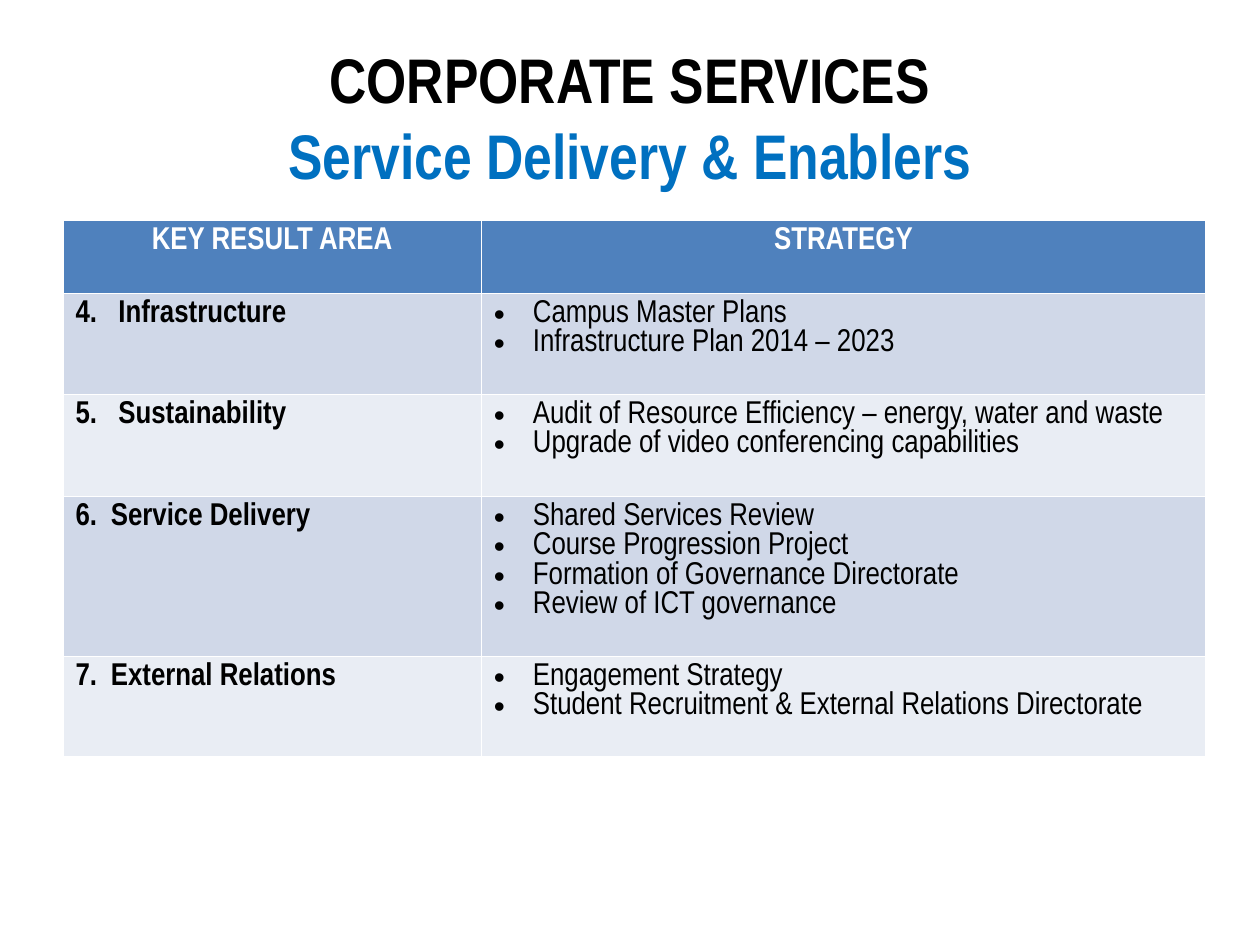
from lxml import etree
from pptx import Presentation
from pptx.dml.color import RGBColor
from pptx.enum.text import MSO_ANCHOR, PP_ALIGN
from pptx.oxml.ns import qn
from pptx.util import Inches, Pt

CENTER = PP_ALIGN.CENTER
LEFT = PP_ALIGN.LEFT
MIDDLE = MSO_ANCHOR.MIDDLE
FONT = "Arial Narrow"
BLACK, WHITE, BLUE = "000000", "FFFFFF", "0070C0"
HEADER_FILL = "4F81BD"
BAND_FILLS = ("D0D8E8", "E9EDF4")
COLUMN_WIDTHS = (3.32, 5.75)
ROW_HEIGHTS = (0.58, 0.8, 0.81, 1.27, 0.8)
HEADINGS = ("KEY RESULT AREA", "STRATEGY")
RESULT_AREAS = (
    ("4.\tInfrastructure", 0.34,
     ("Campus Master Plans", "Infrastructure Plan 2014 – 2023")),
    ("5.\tSustainability", 0.34,
     ("Audit of Resource Efficiency – energy, water and waste",
      "Upgrade of video conferencing capabilities")),
    ("6.\tService Delivery", 0.28,
     ("Shared Services Review", "Course Progression Project",
      "Formation of Governance Directorate", "Review of ICT governance")),
    ("7.\tExternal Relations", 0.28,
     ("Engagement Strategy",
      "Student Recruitment & External Relations Directorate")),
)


def rgb(value):
    """Return the colour for a hex string."""
    return RGBColor.from_string(value)


def add_text(paragraph, text, size=18, color=BLACK, bold=False, align=LEFT, spacing=None):
    """Append a formatted run to a paragraph."""
    paragraph.alignment = align
    if spacing:
        paragraph.line_spacing = spacing
    run = paragraph.add_run()
    run.text = text
    run.font.name = FONT
    run.font.size = Pt(size)
    run.font.bold = bold
    run.font.color.rgb = rgb(color)


def add_tab_stop(paragraph, position):
    """Give a paragraph one left tab stop."""
    tabs = etree.SubElement(paragraph._p.get_or_add_pPr(), qn("a:tabLst"))
    etree.SubElement(tabs, qn("a:tab"), pos=str(Inches(position)), algn="l")


def add_bullet(paragraph, indent=0.31):
    """Give a paragraph a round bullet with a hanging indent."""
    properties = paragraph._p.get_or_add_pPr()
    properties.set("marL", str(Inches(indent)))
    properties.set("indent", str(-Inches(indent)))
    etree.SubElement(properties, qn("a:buFont"), typeface="Arial")
    etree.SubElement(properties, qn("a:buChar"), char="•")


def style_cell(cell, fill):
    """Fill a cell and draw thin white borders around it."""
    properties = cell._tc.get_or_add_tcPr()
    for side in ("a:lnL", "a:lnR", "a:lnT", "a:lnB"):
        line = etree.SubElement(properties, qn(side), w=str(Pt(1)))
        solid = etree.SubElement(line, qn("a:solidFill"))
        etree.SubElement(solid, qn("a:srgbClr"), val=WHITE)
    cell.fill.solid()
    cell.fill.fore_color.rgb = rgb(fill)


def add_title(slide):
    """Add the two-line title."""
    box = slide.shapes.add_textbox(Inches(0.5), Inches(0.3), Inches(9), Inches(1.25))
    frame = box.text_frame
    frame.word_wrap = True
    frame.vertical_anchor = MIDDLE
    paragraph = frame.paragraphs[0]
    add_text(paragraph, "CORPORATE SERVICES", size=36, bold=True, align=CENTER)
    paragraph.add_line_break()
    add_text(paragraph, "Service Delivery & Enablers", size=36, color=BLUE, bold=True, align=CENTER)


def add_strategy_table(slide):
    """Add the table of result areas and their strategies."""
    table = slide.shapes.add_table(
        len(ROW_HEIGHTS), len(COLUMN_WIDTHS), Inches(0.5), Inches(1.75),
        Inches(sum(COLUMN_WIDTHS)), Inches(sum(ROW_HEIGHTS))).table
    for column, width in zip(table.columns, COLUMN_WIDTHS):
        column.width = Inches(width)
    for row, height in zip(table.rows, ROW_HEIGHTS):
        row.height = Inches(height)
    spacing = Pt(16.8)
    for index, heading in enumerate(HEADINGS):
        cell = table.cell(0, index)
        style_cell(cell, HEADER_FILL)
        add_text(cell.text_frame.paragraphs[0], heading, color=WHITE, bold=True,
                 align=CENTER, spacing=spacing)
    for index, (area, tab, strategies) in enumerate(RESULT_AREAS):
        area_cell, strategy_cell = table.rows[index + 1].cells
        for cell in (area_cell, strategy_cell):
            style_cell(cell, BAND_FILLS[index % 2])
        paragraph = area_cell.text_frame.paragraphs[0]
        add_tab_stop(paragraph, tab)
        add_text(paragraph, area, bold=True, spacing=spacing)
        frame = strategy_cell.text_frame
        for number, strategy in enumerate(strategies):
            paragraph = frame.add_paragraph() if number else frame.paragraphs[0]
            add_bullet(paragraph)
            add_text(paragraph, strategy, spacing=spacing)


def main():
    """Build and save the presentation."""
    presentation = Presentation()
    presentation.slide_width = Inches(10)
    presentation.slide_height = Inches(7.5)
    slide = presentation.slides.add_slide(presentation.slide_layouts[6])
    add_title(slide)
    add_strategy_table(slide)
    presentation.save("out.pptx")


if __name__ == "__main__":
    main()
